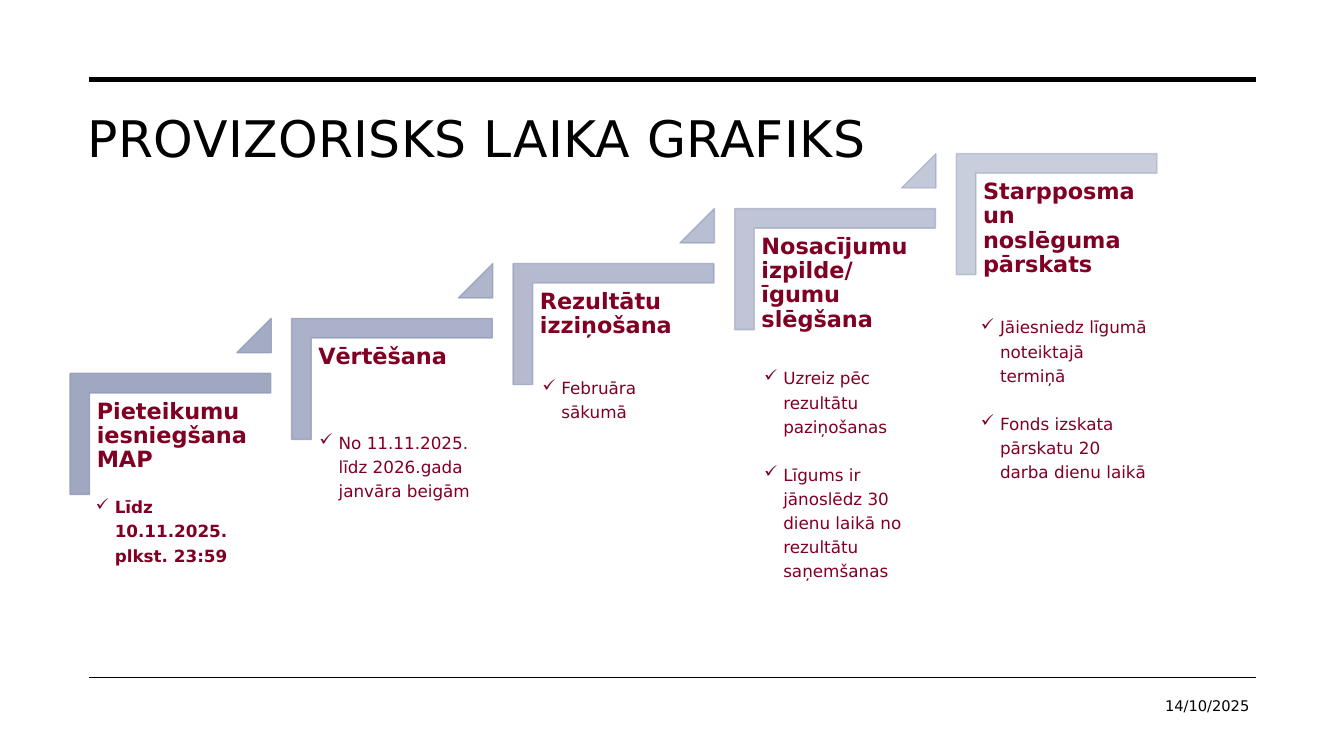
from lxml import etree
from pptx import Presentation
from pptx.dml.color import RGBColor
from pptx.enum import shapes as sh, text as tx
from pptx.oxml import ns
from pptx.util import Inches, Pt

FONT = "DejaVu Sans"
COLORS = {"ink": "000000", "wine": "800024", "step": "959EBB"}
CORNER = sh.MSO_SHAPE.from_xml("corner")
DX, DY = 8.79 / 4, 2.18 / 4  # shift from one step to the next

# heading, list box (left, top, width, height), bold list, list items
STEPS = [
    ("Pieteikumu iesniegšana MAP", (0.85, 4.85, 1.79, 0.8), True,
     ["Līdz 10.11.2025. plkst. 23:59"]),
    ("Vērtēšana", (3.07, 4.21, 1.82, 0.8), False,
     ["No 11.11.2025. līdz 2026.gada janvāra beigām"]),
    ("Rezultātu izziņošana", (5.28, 3.67, 1.62, 0.56), False,
     ["Februāra sākumā"]),
    ("Nosacījumu izpilde/ īgumu slēgšana", (7.48, 3.56, 1.79, 2.26), False,
     ["Uzreiz pēc rezultātu paziņošanas",
      "Līgums ir jānoslēdz 30 dienu laikā no rezultātu saņemšanas"]),
    ("Starpposma un noslēguma pārskats", (9.63, 3.06, 1.85, 1.77), False,
     ["Jāiesniedz līgumā noteiktajā termiņā",
      "Fonds izskata pārskatu 20 darba dienu laikā"]),
]


def rgb(name):
    return RGBColor.from_string(COLORS[name])


def add_run(para, words, size, color, bold=False):
    run = para.add_run()
    run.text = words
    font = run.font
    font.name, font.size, font.bold = FONT, Pt(size), bold
    font.color.rgb = rgb(color)
    return run


def add_box(slide, box, anchor, inset=None):
    frame = slide.shapes.add_textbox(*map(Inches, box)).text_frame
    frame.word_wrap = True
    frame.vertical_anchor = anchor
    if inset is not None:
        frame.margin_left = frame.margin_right = Inches(inset)
        frame.margin_top = frame.margin_bottom = Inches(inset)
    return frame


def add_rule(slide, y, width):
    line = slide.shapes.add_connector(
        sh.MSO_CONNECTOR.STRAIGHT,
        Inches(0.88), Inches(y), Inches(12.46), Inches(y))
    line.line.color.rgb = rgb("ink")
    line.line.width = Pt(width)
    etree.SubElement(line._element.spPr, ns.qn("a:effectLst"))


def add_tint(slide, kind, box, adjust, alpha):
    """Add a step shape whose fill and line share one opacity, in percent."""
    shape = slide.shapes.add_shape(kind, *map(Inches, box))
    shape.shadow.inherit = False
    for i, value in enumerate(adjust):
        shape.adjustments[i] = value
    shape.fill.solid()
    shape.fill.fore_color.rgb = rgb("step")
    shape.line.color.rgb = rgb("step")
    shape.line.width = Pt(1)
    for color in shape._element.spPr.iter(ns.qn("a:srgbClr")):
        etree.SubElement(color, ns.qn("a:alpha"), val=str(alpha * 1000))
    return shape


def add_step(slide, i, heading):
    x, y, alpha = i * DX, i * DY, 90 - 10 * i
    corner = add_tint(slide, CORNER, (1.09 + x, 3.31 - y, 1.2, 1.99),
                      (0.161, 0.161), alpha)
    corner.rotation = 90
    frame = add_box(slide, (0.89 + x, 3.9 - y, 1.8, 1.57),
                    tx.MSO_ANCHOR.TOP, 0.07)
    para = frame.paragraphs[0]
    para.line_spacing = 0.9
    add_run(para, heading, 16, "wine", True)
    if i < len(STEPS) - 1:
        add_tint(slide, sh.MSO_SHAPE.ISOSCELES_TRIANGLE,
                 (2.35 + x, 3.16 - y, 0.34, 0.34), (1,), alpha - 5)


def add_list(slide, box, bold, items):
    frame = add_box(slide, box, tx.MSO_ANCHOR.MIDDLE)
    for i, item in enumerate(items):
        para = frame.add_paragraph() if i else frame.paragraphs[0]
        props = para._p.get_or_add_pPr()
        props.set("marL", str(Inches(0.19)))
        props.set("indent", str(-Inches(0.19)))
        etree.SubElement(props, ns.qn("a:buChar"), char="✓")
        para.line_spacing = 1.2
        if i:
            para.space_before = Pt(17)
        add_run(para, item, 12, "wine", bold)


def set_title(slide, words):
    title = slide.shapes.title
    title.left, title.top = Inches(0.77), Inches(1.01)
    title.width, title.height = Inches(11.69), Inches(1.5)
    frame = title.text_frame
    frame.auto_size = tx.MSO_AUTO_SIZE.NONE
    frame.vertical_anchor = tx.MSO_ANCHOR.TOP
    para = frame.paragraphs[0]
    para.alignment = tx.PP_ALIGN.LEFT
    run = add_run(para, words, 36, "ink")
    run._r.get_or_add_rPr().set("spc", "30")


def add_date(slide, words):
    frame = add_box(slide, (9.48, 6.83, 3.01, 0.35), tx.MSO_ANCHOR.MIDDLE)
    para = frame.paragraphs[0]
    para.alignment = tx.PP_ALIGN.RIGHT
    add_run(para, words, 10.5, "ink")


def main():
    prs = Presentation()
    prs.slide_width, prs.slide_height = Inches(13.33), Inches(7.5)
    slide = prs.slides.add_slide(prs.slide_layouts[5])
    add_rule(slide, 0.79, 3.5)
    add_rule(slide, 6.72, 1)
    set_title(slide, "PROVIZORISKS LAIKA GRAFIKS")
    for i, (heading, box, bold, items) in enumerate(STEPS):
        add_step(slide, i, heading)
        add_list(slide, box, bold, items)
    add_date(slide, "14/10/2025")
    prs.save("out.pptx")


if __name__ == "__main__":
    main()
